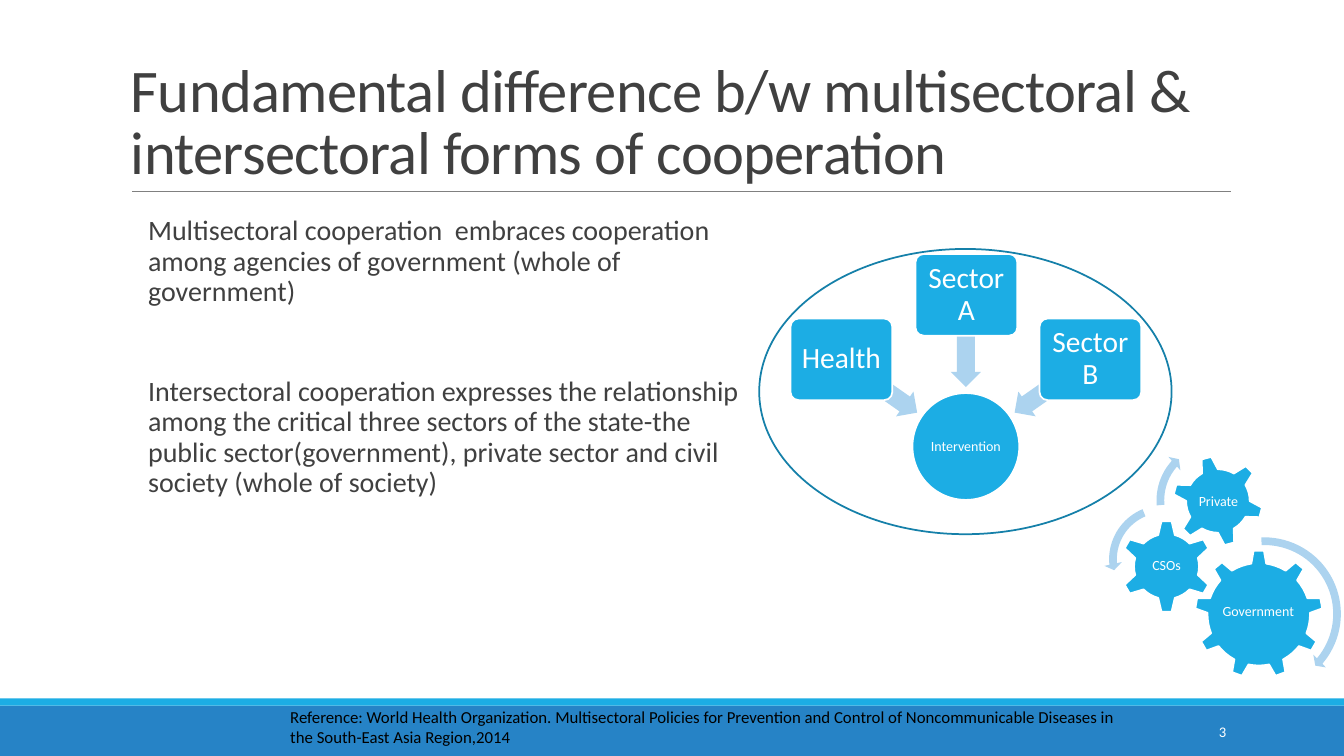
from lxml import etree
from pptx import Presentation
from pptx import util as u
from pptx.dml.color import RGBColor
from pptx.enum import shapes, text
from pptx.oxml.ns import qn

COLORS = {
    "sky": "1CADE4",
    "blue": "2683C6",
    "pale": "ACD3EF",
    "outline": "1580A9",
    "gray": "808080",
    "dark": "404040",
    "black": "000000",
    "white": "FFFFFF",
}
PRESET = shapes.MSO_SHAPE
ALIGN = text.PP_ALIGN
ANCHOR = text.MSO_ANCHOR

presentation = Presentation()
presentation.slide_width = u.Inches(13.33)
presentation.slide_height = u.Inches(7.5)
slide = presentation.slides.add_slide(presentation.slide_layouts[6])


def draw(preset, box, fill=None, line=None, rotation=0, adjustments=()):
    shape = slide.shapes.add_shape(preset, *map(u.Inches, box))
    shape.shadow.inherit = False
    shape.rotation = rotation
    for index, value in enumerate(adjustments):
        shape.adjustments[index] = value
    if fill:
        shape.fill.solid()
        shape.fill.fore_color.rgb = RGBColor.from_string(COLORS[fill])
    else:
        shape.fill.background()
    if line:
        shape.line.color.rgb = RGBColor.from_string(COLORS[line])
        shape.line.width = u.Pt(1.25)
    else:
        shape.line.fill.background()
    return shape


def write(shape, lines, size, color, align=ALIGN.LEFT, anchor=ANCHOR.TOP,
          spacing=1.0, insets=(0.1, 0.05)):
    frame = shape.text_frame
    frame.word_wrap = True
    frame.vertical_anchor = anchor
    frame.margin_left = frame.margin_right = u.Inches(insets[0])
    frame.margin_top = frame.margin_bottom = u.Inches(insets[1])
    for index, line in enumerate(lines):
        paragraph = frame.add_paragraph() if index else frame.paragraphs[0]
        paragraph.text = line
        paragraph.alignment = align
        paragraph.line_spacing = spacing
        paragraph.font.name = "Calibri"
        paragraph.font.size = u.Pt(size)
        paragraph.font.color.rgb = RGBColor.from_string(COLORS[color])
    return frame


draw(PRESET.RECTANGLE, (0, 7, 13.33, 0.5), "blue")
draw(PRESET.RECTANGLE, (0, 6.93, 13.33, 0.07), "sky")

title_rule = slide.shapes.add_connector(
    shapes.MSO_CONNECTOR.STRAIGHT,
    u.Inches(1.31), u.Inches(1.9), u.Inches(12.21), u.Inches(1.9))
title_rule.line.color.rgb = RGBColor.from_string(COLORS["gray"])
title_rule.line.width = u.Pt(0.5)
etree.SubElement(title_rule._element.spPr, qn("a:effectLst"))

title_box = slide.shapes.add_textbox(*map(u.Inches, (1.2, 0.31, 11, 1.59)))
title = write(
    title_box,
    ["Fundamental difference b/w multisectoral & intersectoral forms of cooperation"],
    43.2, "dark", anchor=ANCHOR.BOTTOM, spacing=0.85)
title.paragraphs[0].runs[0]._r.get_or_add_rPr().set("spc", "-50")

body_box = slide.shapes.add_textbox(*map(u.Inches, (1.37, 2.1, 6.01, 4.25)))
body = write(
    body_box,
    ["Multisectoral cooperation  embraces cooperation among agencies of "
     "government (whole of government)",
     "Intersectoral cooperation expresses the relationship among the critical "
     "three sectors of the state-the public sector(government), private sector "
     "and civil society (whole of society)"],
    20, "dark", spacing=0.9)
body.margin_right = 0
for paragraph, space_before in zip(body.paragraphs, (12, 48)):
    paragraph.space_before = u.Pt(space_before)
    paragraph.space_after = u.Pt(2)

gears = [
    ("Government", PRESET.GEAR_9, (11.85, 5.46, 1.27, 1.27), 0, (12.1, 5.75, 0.76, 0.65)),
    ("CSOs", PRESET.GEAR_6, (11.11, 5.16, 0.92, 0.92), 0, (11.34, 5.39, 0.46, 0.45)),
    ("Private", PRESET.GEAR_6, (11.63, 4.52, 0.9, 0.9), 345, (11.83, 4.72, 0.51, 0.51)),
]
for name, preset, box, rotation, label_box in gears:
    draw(preset, box, "sky", "white", rotation)
    label = slide.shapes.add_textbox(*map(u.Inches, label_box))
    write(label, [name], 10, "white", ALIGN.CENTER, ANCHOR.MIDDLE, 0.9, (0.01, 0.01))

turning_arrows = [
    (PRESET.CIRCULAR_ARROW, (11.73, 5.28, 1.62, 1.62), (0.047, 2.99, 24.291, 160.636, 0.055)),
    (PRESET.LEFT_CIRCULAR_ARROW, (10.95, 4.96, 1.18, 1.18), (0.065, 4.3, 104.891, 148.378, 0.075)),
    (PRESET.CIRCULAR_ARROW, (11.42, 4.33, 1.27, 1.27), (0.06, 3.941, 133.138, 105.082, 0.07)),
]
for preset, box, adjustments in turning_arrows:
    draw(preset, box, "pale", adjustments=adjustments)

intervention = draw(PRESET.OVAL, (9.05, 3.9, 1.06, 1.06), "sky", "white")
write(intervention, ["Intervention"], 10, "white", ALIGN.CENTER, ANCHOR.MIDDLE, 0.9, (0.01, 0.01))

sectors = [
    ("Health", 7.84, 3.16, 8.26, 3.68, 215),
    ("Sector A", 9.08, 2.52, 9.12, 3.23, 270),
    ("Sector B", 10.31, 3.16, 9.98, 3.68, 325),
]
for name, left, top, arrow_left, arrow_top, rotation in sectors:
    draw(PRESET.LEFT_ARROW, (arrow_left, arrow_top, 0.92, 0.3), "pale",
         rotation=rotation, adjustments=(0.6, 0.5))
    sector = draw(PRESET.ROUNDED_RECTANGLE, (left, top, 1.01, 0.81), "sky", "white",
                  adjustments=(0.1,))
    write(sector, [name], 21, "white", ALIGN.CENTER, ANCHOR.MIDDLE, 0.9, (0.04, 0.04))

draw(PRESET.OVAL, (7.53, 2.47, 4.09, 2.83), line="outline")

reference = slide.shapes.add_textbox(*map(u.Inches, (2.78, 6.96, 8.58, 0.5)))
write(reference,
      ["Reference: World Health Organization. Multisectoral Policies for Prevention "
       "and Control of Noncommunicable Diseases in the South-East Asia Region,2014"],
      12, "black")

slide_number = slide.shapes.add_textbox(*map(u.Inches, (10.83, 7.06, 1.43, 0.4)))
write(slide_number, ["3"], 10.5, "white", ALIGN.RIGHT, ANCHOR.MIDDLE)

presentation.save("out.pptx")
